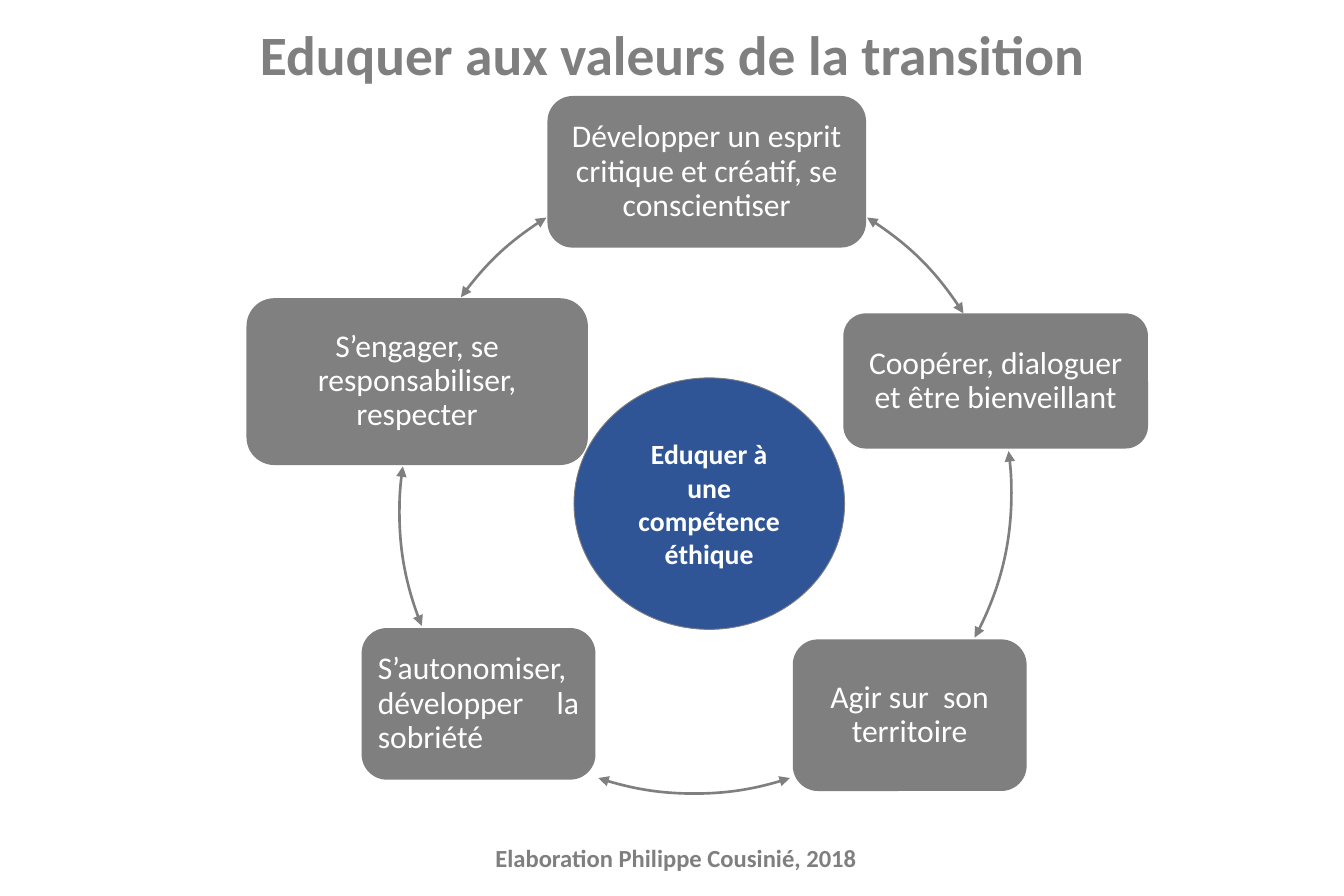
from dataclasses import dataclass

import pptx
import pptx.dml.color
import pptx.enum.shapes
import pptx.enum.text
import pptx.oxml
import pptx.oxml.ns
import pptx.util

EMU_PER_PX = 9144  # 100 px to the inch
SLIDE_WIDTH, SLIDE_HEIGHT = 1063, 709
ARC_DIAMETER = 480
ANGLE_UNIT = 0.6  # adjustment value of one degree
FONT = "Calibri"
COLORS = {
    "grey": "7F7F7F",
    "box": "808080",
    "blue": "2F5597",
    "white": "FFFFFF",
}
SHAPES = pptx.enum.shapes.MSO_SHAPE
ALIGN = pptx.enum.text.PP_ALIGN
ANCHOR = pptx.enum.text.MSO_ANCHOR


@dataclass(frozen=True)
class ValueBox:
    text: str
    left: int
    top: int
    width: int
    height: int
    fill: str = "grey"
    align: ALIGN = ALIGN.CENTER


@dataclass(frozen=True)
class CycleArrow:
    """Arc of a circle, with angles in degrees clockwise from the right."""

    left: int
    top: int
    start: float
    end: float


VALUE_BOXES = [
    ValueBox("Développer un esprit critique et créatif, se conscientiser",
             433, 76, 252, 120, fill="box"),
    ValueBox("Coopérer, dialoguer et être bienveillant", 667, 248, 241, 107),
    ValueBox("Agir sur  son territoire", 627, 506, 185, 120),
    ValueBox("S’autonomiser, développer la sobriété", 286, 497, 185, 120,
             align=ALIGN.JUSTIFY),
    ValueBox("S’engager, se responsabiliser, respecter",
             195, 236, 270, 132, fill="box"),
]
CYCLE_ARROWS = [
    CycleArrow(319, 136, 301.9, 327.8),
    CycleArrow(320, 150, 352.1, 28.5),
    CycleArrow(309, 148, 71.6, 108.4),
    CycleArrow(316, 165, 157.9, 188.6),
    CycleArrow(319, 136, 215.9, 238.1),
]


def px(length: int) -> pptx.util.Emu:
    return pptx.util.Emu(length * EMU_PER_PX)


def rgb(name: str) -> pptx.dml.color.RGBColor:
    return pptx.dml.color.RGBColor.from_string(COLORS[name])


def add_shape(slide, kind: SHAPES, left: int, top: int, width: int, height: int,
              fill: str | None = None, line: str | None = None,
              line_width: float = 1):
    shape = slide.shapes.add_shape(kind, px(left), px(top), px(width), px(height))
    shape.shadow.inherit = False
    if fill:
        shape.fill.solid()
        shape.fill.fore_color.rgb = rgb(fill)
    else:
        shape.fill.background()
    if line:
        shape.line.color.rgb = rgb(line)
        shape.line.width = pptx.util.Pt(line_width)
    else:
        shape.line.fill.background()
    return shape


def write_text(shape, text: str, *, size: float, color: str = "white",
               bold: bool = False, align: ALIGN = ALIGN.CENTER,
               anchor: ANCHOR = ANCHOR.MIDDLE, line_spacing: float = 1.0,
               margins: tuple[int, int] = (10, 5)) -> None:
    """Fill a shape with one paragraph; margins are (sides, top and bottom)."""
    frame = shape.text_frame
    frame.word_wrap = True
    frame.vertical_anchor = anchor
    frame.margin_left = frame.margin_right = px(margins[0])
    frame.margin_top = frame.margin_bottom = px(margins[1])
    paragraph = frame.paragraphs[0]
    paragraph.alignment = align
    paragraph.line_spacing = line_spacing
    run = paragraph.add_run()
    run.text = text
    run.font.name = FONT
    run.font.size = pptx.util.Pt(size)
    run.font.bold = bold
    run.font.color.rgb = rgb(color)


def add_value_box(slide, box: ValueBox) -> None:
    shape = add_shape(slide, SHAPES.ROUNDED_RECTANGLE, box.left, box.top,
                      box.width, box.height, fill=box.fill)
    write_text(shape, box.text, size=18, align=box.align, line_spacing=0.9,
               margins=(7, 7))


def add_cycle_arrow(slide, arrow: CycleArrow) -> None:
    arc = add_shape(slide, SHAPES.ARC, arrow.left, arrow.top,
                    ARC_DIAMETER, ARC_DIAMETER, line="grey", line_width=1.5)
    arc.adjustments[0] = arrow.start * ANGLE_UNIT
    arc.adjustments[1] = arrow.end * ANGLE_UNIT
    line_properties = arc.line._get_or_add_ln()
    for end in ("a:headEnd", "a:tailEnd"):
        arrowhead = pptx.oxml.parse_xml(
            f'<{end} {pptx.oxml.ns.nsdecls("a")} type="triangle"/>')
        line_properties.append(arrowhead)


def main() -> None:
    presentation = pptx.Presentation()
    presentation.slide_width = px(SLIDE_WIDTH)
    presentation.slide_height = px(SLIDE_HEIGHT)
    slide = presentation.slides.add_slide(presentation.slide_layouts[6])

    title = slide.shapes.add_textbox(px(0), px(4), px(SLIDE_WIDTH), px(76))
    write_text(title, "Eduquer aux valeurs de la transition", size=31.6,
               color="grey", bold=True, margins=(10, 10))

    for box, arrow in zip(VALUE_BOXES, CYCLE_ARROWS):
        add_value_box(slide, box)
        add_cycle_arrow(slide, arrow)

    credit = add_shape(slide, SHAPES.RECTANGLE, 382, 662, 543, 34, fill="white")
    write_text(credit, "Elaboration Philippe Cousinié, 2018", size=14,
               color="grey", bold=True, align=ALIGN.LEFT, anchor=ANCHOR.TOP)

    core = add_shape(slide, SHAPES.OVAL, 454, 299, 214, 199,
                     fill="blue", line="grey", line_width=0.5)
    write_text(core, "Eduquer à une compétence éthique", size=15.8, bold=True)

    presentation.save("out.pptx")


if __name__ == "__main__":
    main()
